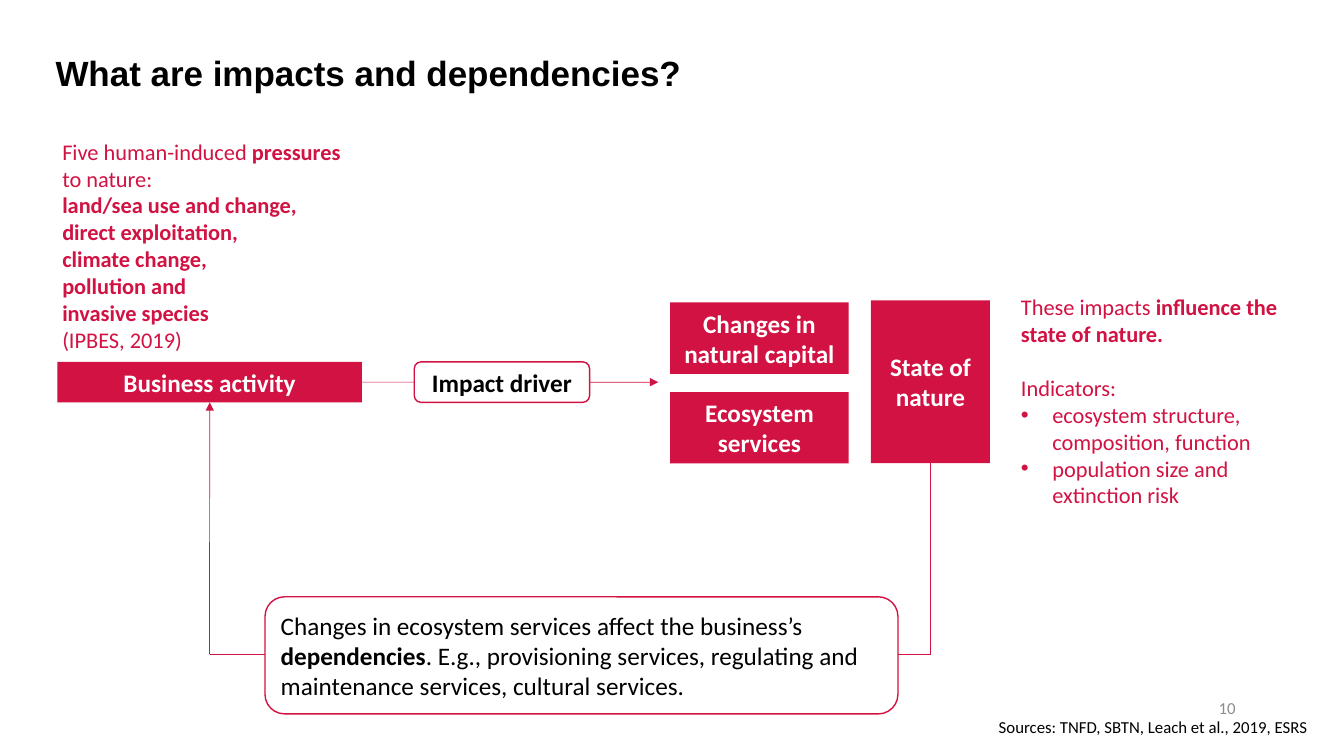
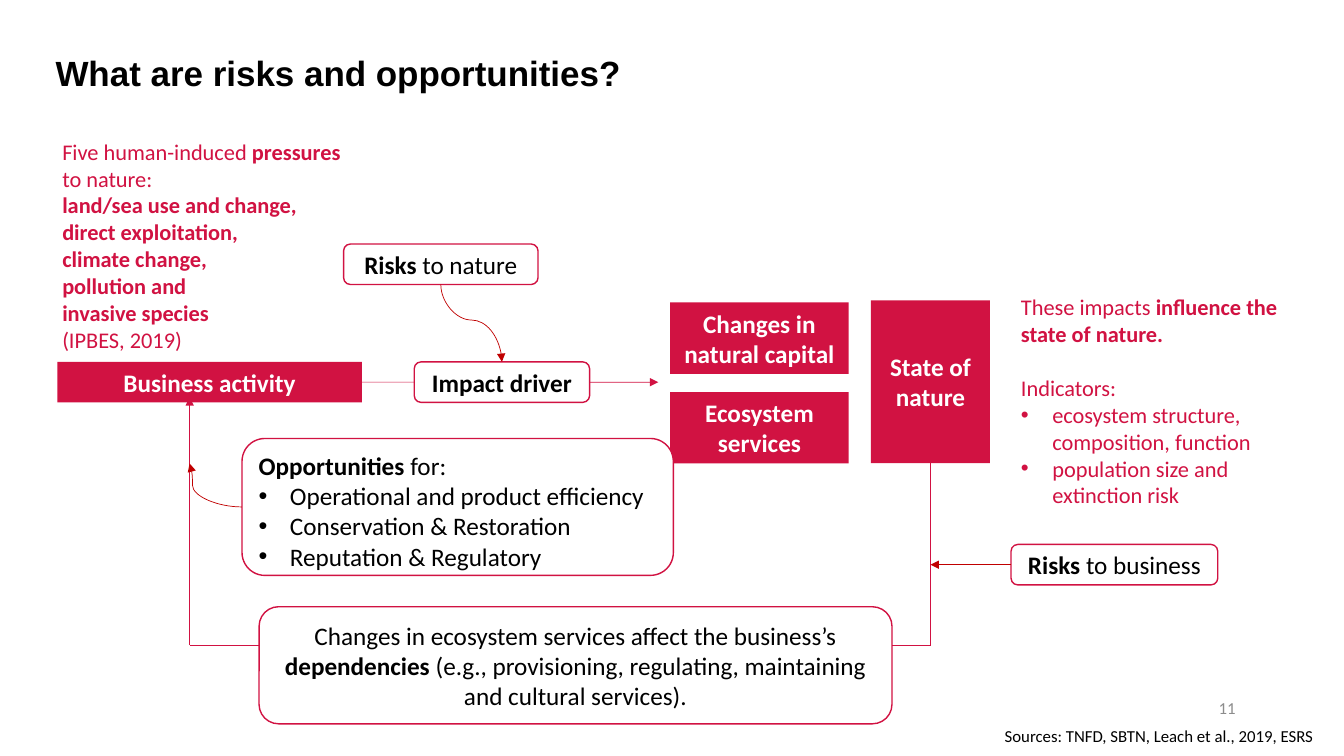
from lxml import etree
from pptx import Presentation
from pptx.dml.color import RGBColor
from pptx.enum.shapes import MSO_CONNECTOR as Link, MSO_SHAPE as Form
from pptx.enum.text import MSO_ANCHOR as Anchor, PP_ALIGN as Align
from pptx.oxml.ns import qn
from pptx.util import Cm, Pt

RED = RGBColor(0xD1, 0x12, 0x42)
DARK = RGBColor(0xC0, 0x00, 0x00)
GREY = RGBColor(0x8C, 0x8C, 0x8C)
BLACK = RGBColor(0, 0, 0)
WHITE = RGBColor(255, 255, 255)

# Text styles: font values, then paragraph and frame values
BODY = dict(name="Calibri", size=Pt(18), color=BLACK)
HEAD = dict(name="Arial", size=Pt(25), color=BLACK)
NOTE = dict(BODY, size=Pt(16), color=RED)
SMALL = dict(BODY, size=Pt(12))
LIGHT = dict(BODY, color=WHITE)
MID = dict(alignment=Align.CENTER)
TIGHT = dict(margin_left=0, margin_top=0, margin_right=0, margin_bottom=0)

# Content shared by both slides: ** switches bold, a leading • makes a bullet
PRESS = ["Five human-induced** pressures** to nature:\n**land/sea use and change,\n"
         "direct exploitation,\nclimate change,\npollution and\ninvasive species\n**(IPBES, 2019)"]
STATE = ["These impacts **influence the state of nature.**", "Indicators:",
         "•ecosystem structure, composition, function",
         "•population size and extinction risk"]
BOXES = {
    "firm": ("**Business activity**", (1.45, 9.12, 7.67, 1.02)),
    "stock": ("**Changes in natural capital**", (16.89, 7.62, 4.5, 1.8)),
    "eco": ("**Ecosystem services**", (16.89, 9.88, 4.5, 1.8)),
    "state": ("**State of nature**", (21.95, 7.57, 3, 4.1)),
}
SOURCE = "Sources: TNFD, SBTN, Leach et al., 2019, ESRS"

# Content that differs
IMPACT = dict(
    title="What are impacts and dependencies?", page="10", credit=(24.92, 17.93),
    text="Changes in ecosystem services affect the business’s **dependencies**. E.g., "
         "provisioning services, regulating and maintenance services, cultural services.",
    box=(6.68, 15.04), align=Align.LEFT, loop=(5.28, 16.48), tip=10.14)
RISK = dict(
    title="What are risks and opportunities?", page="11", credit=(25.07, 18.16),
    text="Changes in ecosystem services affect the business’s **dependencies** "
         "(e.g., provisioning, regulating, maintaining and cultural services).",
    box=(6.53, 15.29), align=Align.CENTER, loop=(4.78, 16.26), tip=10.01)
CHANCE = ["**Opportunities **for:", "•Operational and product efficiency",
          "•Conservation & Restoration", "•Reputation & Regulatory"]


def apply(item, vals):
    for key, val in vals.items():
        setattr(item, key, val)


def bullet(para):
    props = para._p.get_or_add_pPr()
    props.set("marL", str(Cm(0.79)))
    props.set("indent", str(-Cm(0.79)))
    etree.SubElement(props, qn("a:buFont")).set("typeface", "Arial")
    etree.SubElement(props, qn("a:buChar")).set("char", "•")


def write(shape, lines, font, form=None, anchor=Anchor.TOP):
    frame = shape.text_frame
    apply(frame, dict(word_wrap=True, vertical_anchor=anchor))
    for i, line in enumerate(lines):
        para = frame.paragraphs[0] if i == 0 else frame.add_paragraph()
        if line.startswith("•"):
            bullet(para)
        apply(para, {"alignment": Align.LEFT, **(form or {})})
        for j, part in enumerate(line.lstrip("•").split("**")):
            for k, piece in enumerate(part.split("\n")):
                if k:
                    para.add_line_break()
                if piece:
                    run = para.add_run()
                    run.text = piece
                    apply(run.font, dict(name=font["name"], size=font["size"], bold=j % 2 == 1))
                    run.font.color.rgb = font["color"]
    return frame


def label(slide, at, lines, font, form=None, anchor=Anchor.TOP):
    return write(slide.shapes.add_textbox(*map(Cm, at)), lines, font, form, anchor)


def block(slide, at, lines, full=False, form=MID, anchor=Anchor.MIDDLE):
    kind = Form.RECTANGLE if full else Form.ROUNDED_RECTANGLE
    shape = slide.shapes.add_shape(kind, *map(Cm, at))
    shape.shadow.inherit = False
    shape.fill.solid()
    shape.fill.fore_color.rgb = RED if full else WHITE
    if full:
        shape.line.fill.background()
    else:
        shape.line.color.rgb = RED
        shape.line.width = Pt(1)
    write(shape, lines, LIGHT if full else BODY, form, anchor)
    return shape


def link(slide, start, end, color=RED, head=True, kind=Link.STRAIGHT, bend=None):
    """Each end is a point in cm or a (shape, side) pair."""
    joins = [isinstance(p[0], (int, float)) for p in (start, end)]
    spots = [tuple(map(Cm, p)) if free else (0, 0) for p, free in zip((start, end), joins)]
    line = slide.shapes.add_connector(kind, *spots[0], *spots[1])
    for free, join, spot in zip(joins, (line.begin_connect, line.end_connect), (start, end)):
        if not free:
            join(*spot)
    line.line.color.rgb = color
    line.line.width = Pt(0.5)
    props = line._element.spPr
    if head:
        etree.SubElement(line.line._get_or_add_ln(), qn("a:tailEnd")).set("type", "triangle")
    etree.SubElement(props, qn("a:effectLst"))
    if bend:
        guide = etree.SubElement(props.find(qn("a:prstGeom")).find(qn("a:avLst")), qn("a:gd"))
        guide.set("name", "adj1")
        guide.set("fmla", f"val {bend}")
    return line


def turn(line):
    """Make a curve that runs down and right leave vertically."""
    wide, high = line.width, line.height
    shift = (wide - high) // 2
    apply(line, dict(left=line.left + shift, top=line.top - shift, width=high, height=wide))
    frame = line._element.spPr.find(qn("a:xfrm"))
    frame.set("rot", "16200000")
    frame.set("flipH", "1")


def build(deck, data):
    slide = deck.slides.add_slide(deck.slide_layouts[6])
    # Title, page number and sources
    frame = label(slide, (1.4, 1.42, 25.76, 1.32), [f"**{data['title']}**"], HEAD,
                  dict(line_spacing=0.9))
    apply(frame, TIGHT)
    label(slide, (23.77, 17.32, 7.62, 1.02), [data["page"]], dict(SMALL, color=GREY),
          dict(alignment=Align.RIGHT), Anchor.MIDDLE)
    label(slide, (*data["credit"], 8.41, 0.76), [SOURCE], SMALL)
    # Side notes
    label(slide, (1.32, 3.35, 7.72, 5.74), PRESS, NOTE)
    note = label(slide, (25.48, 7.26, 7.54, 5.74), STATE, NOTE)
    note.paragraphs[1].space_before = Pt(19.5)
    # Chain from business to nature
    boxes = {key: block(slide, at, [text], True) for key, (text, at) in BOXES.items()}
    link(slide, (boxes["firm"], 3), (16.59, 9.63))
    driver = block(slide, (10.44, 9.12, 4.42, 1.02), ["**Impact driver**"])
    # Loop back to business
    left, low = data["loop"]
    link(slide, (boxes["state"], 2), (23.45, low), head=False)
    link(slide, (23.45, low), (left, low), head=False)
    tip = (boxes["firm"], 2) if data is IMPACT else (left, data["tip"])
    link(slide, (left, low), tip)
    block(slide, (*data["box"], 15.95, 2.95), [data["text"]], form=dict(alignment=data["align"]))
    return slide, driver


def add_risks(slide, driver):
    nature = block(slide, (8.66, 6.15, 4.9, 1.02), ["**Risks **to nature"])
    turn(link(slide, (nature, 2), (driver, 0), DARK, kind=Link.CURVE, bend=45900))
    firm = block(slide, (25.48, 13.72, 5.21, 1.02), ["**Risks **to business"])
    link(slide, (firm, 1), (23.45, 14.23), DARK)
    chance = block(slide, (6.1, 11.05, 10.87, 3.45), CHANCE, form={}, anchor=Anchor.TOP)
    link(slide, (chance, 1), (4.78, 11.68), DARK, kind=Link.CURVE, bend=94600)


def main():
    deck = Presentation()
    apply(deck, dict(slide_width=Cm(33.87), slide_height=Cm(19.05)))
    build(deck, IMPACT)
    add_risks(*build(deck, RISK))
    deck.save("out.pptx")


if __name__ == "__main__":
    main()
